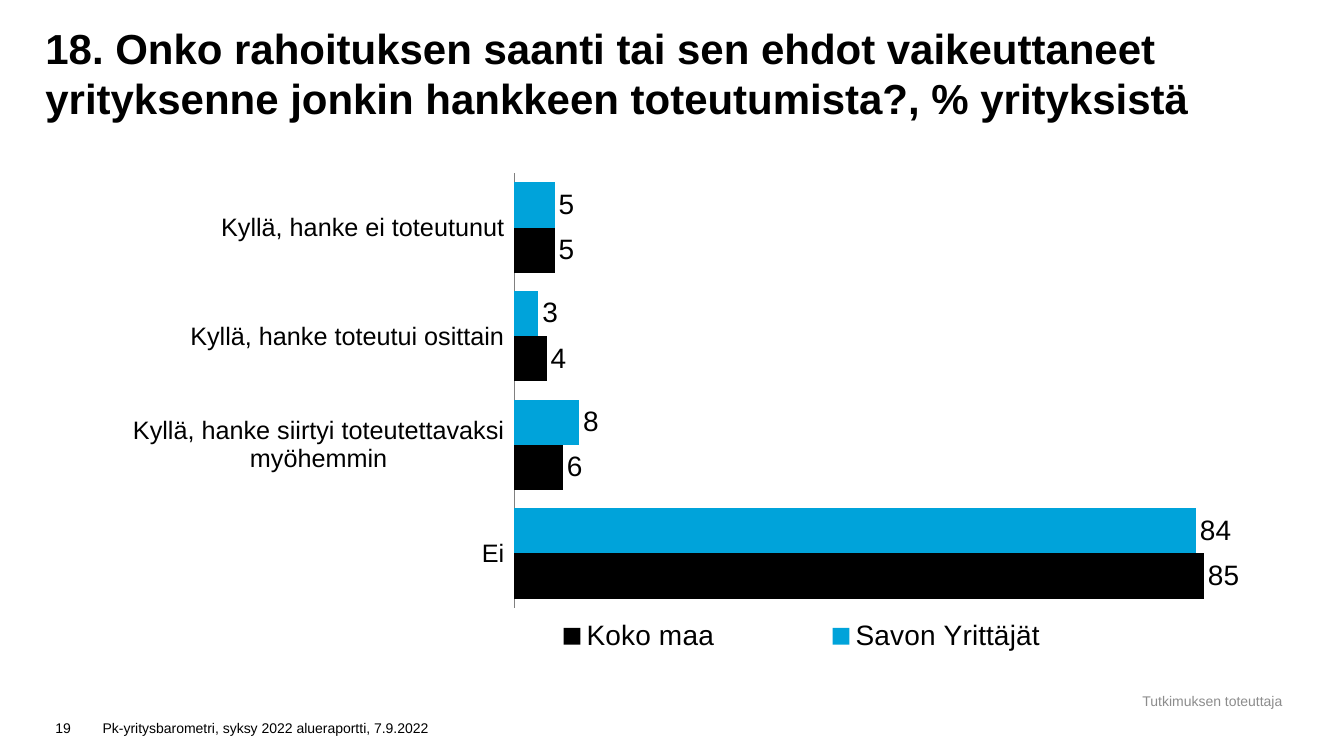
from dataclasses import dataclass

from lxml.etree import SubElement
from pptx import Presentation
from pptx.chart.data import CategoryChartData
from pptx.dml.color import RGBColor
from pptx.enum.chart import XL_CHART_TYPE, XL_LABEL_POSITION, XL_LEGEND_POSITION, XL_TICK_LABEL_POSITION, XL_TICK_MARK
from pptx.enum.text import MSO_ANCHOR, PP_ALIGN
from pptx.oxml.ns import qn
from pptx.util import Inches, Pt

FONT = "Arial"
BLACK, BLUE, GREY, AXIS_GREY = "000000", "00A3DA", "8C8C8C", "808080"


@dataclass
class Label:
    text: str
    left: float
    top: float
    width: float
    height: float
    size: float = 10
    color: str = BLACK
    bold: bool = False
    anchor: MSO_ANCHOR = MSO_ANCHOR.BOTTOM
    align: PP_ALIGN = PP_ALIGN.LEFT
    side_inset: float = 0.1
    end_inset: float = 0.05


@dataclass
class Series:
    name: str
    values: tuple[int, ...]
    color: str


LABELS = [
    Label("18. Onko rahoituksen saanti tai sen ehdot vaikeuttaneet yrityksenne "
          "jonkin hankkeen toteutumista?, % yrityksistä",
          0.45, 0, 12.3, 1.22, size=30, bold=True, side_inset=0, end_inset=0),
    Label("Tutkimuksen toteuttaja", 11.16, 6.82, 1.73, 0.26, color=GREY,
          anchor=MSO_ANCHOR.MIDDLE, align=PP_ALIGN.CENTER),
    Label("Pk-yritysbarometri, syksy 2022 alueraportti, 7.9.2022", 0.92, 7, 4.17, 0.35),
    Label("19", 0.45, 7, 0.47, 0.35),
]
CATEGORIES = ["Kyllä, hanke ei toteutunut", "Kyllä, hanke toteutui osittain",
              "Kyllä, hanke siirtyi toteutettavaksi myöhemmin", "Ei"]
SERIES = [
    Series("Savon Yrittäjät", (5, 3, 8, 84), BLUE),
    Series("Koko maa", (5, 4, 6, 85), BLACK),
]


def rgb(color: str) -> RGBColor:
    return RGBColor.from_string(color)


def set_font(font, size: float, color: str = BLACK, bold: bool = False) -> None:
    for name, value in {"name": FONT, "size": Pt(size), "bold": bold}.items():
        setattr(font, name, value)
    font.color.rgb = rgb(color)


def add_label(slide, label: Label) -> None:
    box = slide.shapes.add_textbox(Inches(label.left), Inches(label.top),
                                   Inches(label.width), Inches(label.height))
    frame_format = {
        "word_wrap": True, "vertical_anchor": label.anchor,
        "margin_left": Inches(label.side_inset), "margin_right": Inches(label.side_inset),
        "margin_top": Inches(label.end_inset), "margin_bottom": Inches(label.end_inset),
    }
    for name, value in frame_format.items():
        setattr(box.text_frame, name, value)
    paragraph = box.text_frame.paragraphs[0]
    paragraph.alignment = label.align
    run = paragraph.add_run()
    run.text = label.text
    set_font(run.font, label.size, label.color, label.bold)


def place_layout(layout, area: tuple[float, ...], inner: bool = False) -> None:
    """Place a chart part by fractions of the chart: left, top, width, height."""
    manual = SubElement(layout, qn("c:manualLayout"))
    settings = {"layoutTarget": "inner"} if inner else {}
    settings |= {"xMode": "edge", "yMode": "edge"}
    settings |= dict(zip("xywh", map(str, area)))
    for tag, value in settings.items():
        SubElement(manual, qn(f"c:{tag}")).set("val", value)


def add_bar_chart(slide) -> None:
    data = CategoryChartData(number_format="#,##0")
    data.categories = CATEGORIES
    for series in SERIES:
        data.add_series(series.name, series.values)
    chart = slide.shapes.add_chart(XL_CHART_TYPE.BAR_CLUSTERED, Inches(0.45), Inches(1.55),
                                   Inches(12.3), Inches(5.12), data).chart
    chart.has_title = False
    set_font(chart.font, 20)

    # Bars and value labels
    plot = chart.plots[0]
    for name, value in {"gap_width": 40, "overlap": 0, "vary_by_categories": False}.items():
        setattr(plot, name, value)
    label_format = {"show_value": True, "number_format": "#,##0",
                    "number_format_is_linked": False, "position": XL_LABEL_POSITION.OUTSIDE_END}
    for series, bars in zip(SERIES, plot.series):
        bars.format.fill.solid()
        bars.format.fill.fore_color.rgb = rgb(series.color)
        for name, value in label_format.items():
            setattr(bars.data_labels, name, value)
        set_font(bars.data_labels.font, 20)

    # Axes
    categories, values = chart.category_axis, chart.value_axis
    category_format = {"reverse_order": True, "major_tick_mark": XL_TICK_MARK.NONE,
                       "minor_tick_mark": XL_TICK_MARK.NONE,
                       "tick_label_position": XL_TICK_LABEL_POSITION.LOW}
    for name, value in category_format.items():
        setattr(categories, name, value)
    categories.format.line.color.rgb = rgb(AXIS_GREY)
    categories.format.line.width = Pt(0.75)
    set_font(categories.tick_labels.font, 18)
    value_format = {"visible": False, "has_major_gridlines": False,
                    "minimum_scale": 0, "maximum_scale": 90}
    for name, value in value_format.items():
        setattr(values, name, value)

    # Plot area and legend placement
    plot_area = chart.plots[0]._element.getparent()
    plot_layout = plot_area.find(qn("c:layout"))
    if plot_layout is None:
        plot_layout = SubElement(plot_area, qn("c:layout"))
        plot_area.insert(0, plot_layout)
    place_layout(plot_layout, (0.378, 0.033, 0.589, 0.842), inner=True)
    chart.has_legend = True
    legend = chart.legend
    legend.position = XL_LEGEND_POSITION.RIGHT
    legend.include_in_layout = False
    set_font(legend.font, 20)
    legend_layout = legend._element.find(qn("c:layout"))
    if legend_layout is None:
        legend_layout = SubElement(legend._element, qn("c:layout"))
        legend._element.find(qn("c:legendPos")).addnext(legend_layout)
    place_layout(legend_layout, (0.33, 0.88, 0.56, 0.1))


def main() -> None:
    presentation = Presentation()
    presentation.slide_width, presentation.slide_height = Inches(13.33), Inches(7.5)
    slide = presentation.slides.add_slide(presentation.slide_layouts[6])
    for label in LABELS:
        add_label(slide, label)
    add_bar_chart(slide)
    presentation.save("out.pptx")


if __name__ == "__main__":
    main()
